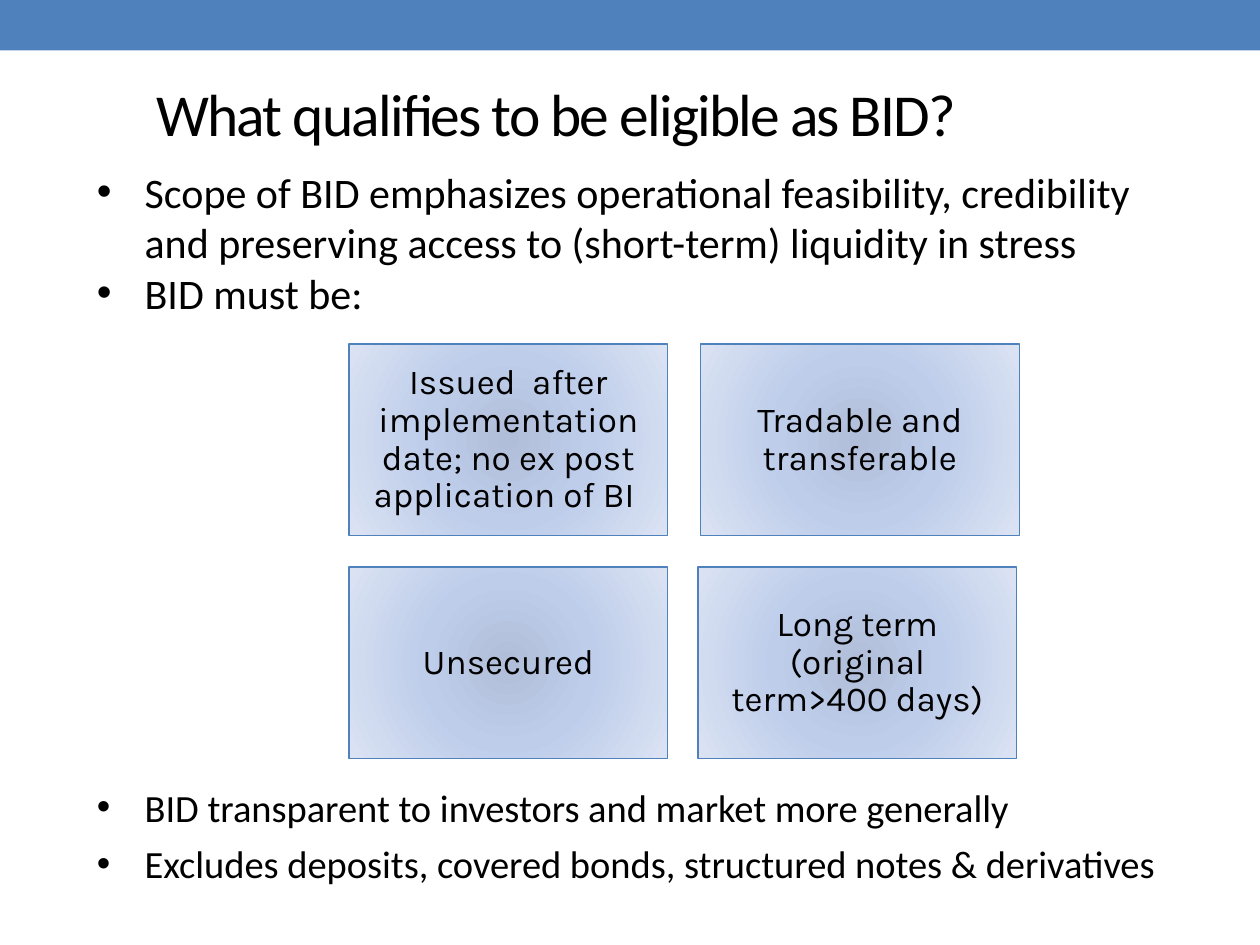
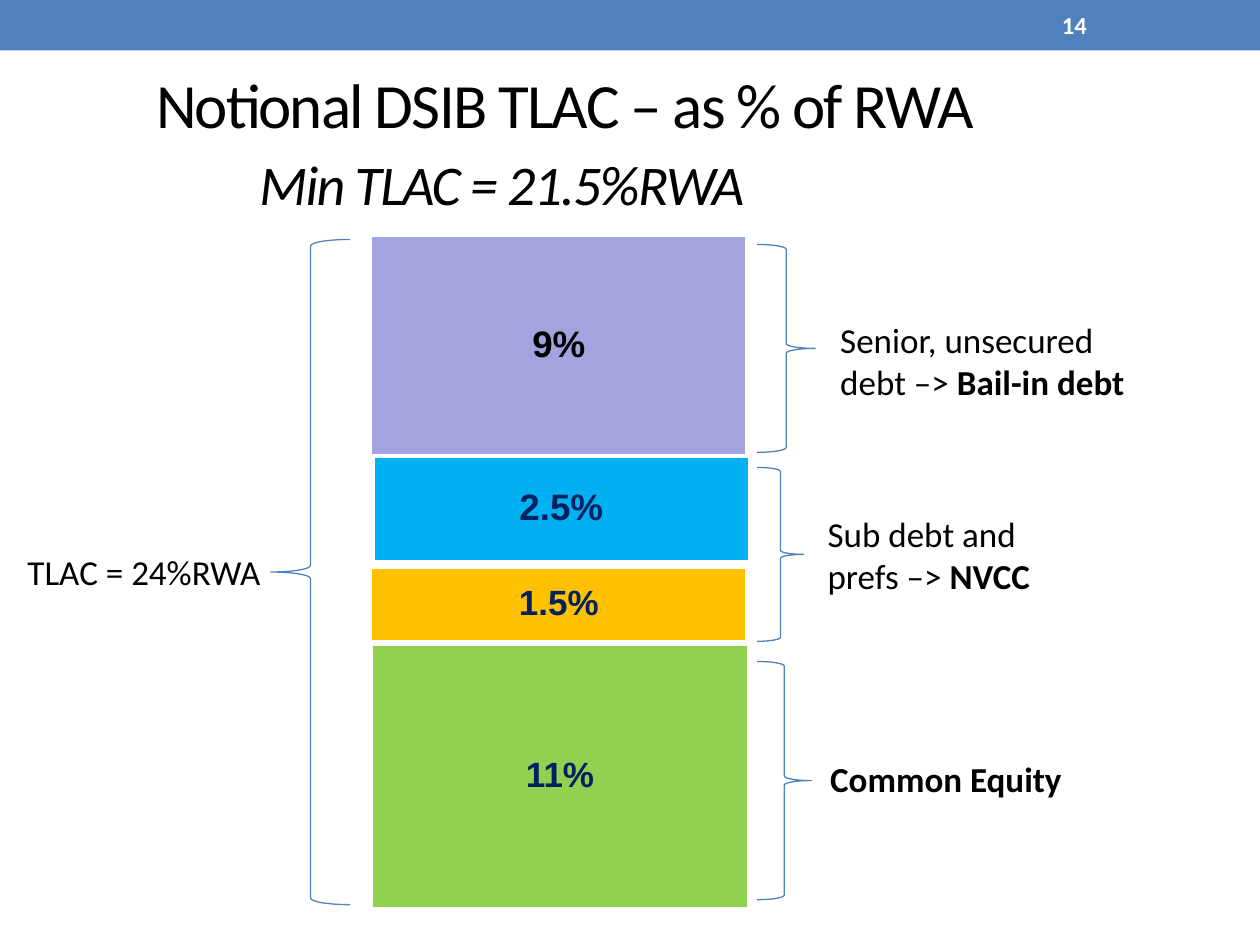
"""Builds two slides on bail-in debt: eligibility criteria and the TLAC stack."""
from lxml import etree
from pptx import Presentation
from pptx.dml.color import RGBColor
from pptx.enum.shapes import MSO_SHAPE
from pptx.enum.text import MSO_ANCHOR, PP_ALIGN
from pptx.oxml import parse_xml
from pptx.oxml.ns import nsdecls, qn
from pptx.util import Inches, Pt

BLUE, BLACK, WHITE, NAVY = "4F81BD", "000000", "FFFFFF", "002060"
CARD_STOPS = [(0, "B0BED9"), (45, "BECDEA"), (100, "DBE3F3")]
BODY_FONT, CARD_FONT, STACK_FONT = "Calibri", "Karla", "Arial"

ELIGIBILITY_TITLE = [("What qualifies to be eligible as BID?", 34, False, 0, 0)]
SCOPE_BULLETS = [
    "Scope of BID emphasizes operational feasibility, credibility and preserving "
    "access to (short-term) liquidity in stress",
    "BID must be:",
]
CLOSING_BULLETS = [
    "BID transparent to investors and market more generally",
    "Excludes deposits, covered bonds, structured notes & derivatives",
]
CARD_SIZE = (2.53, 1.52)
CARD_ROWS = [
    (2.73, [(2.77, "Issued  after implementation date; no ex post application of BI "),
            (5.56, "Tradable and transferable")]),
    (4.5, [(2.77, "Unsecured"),
           (5.54, "Long term (original term>400 days)")]),
]

STACK_TITLE = [
    ("Notional DSIB TLAC – as % of RWA", 36, False, 0, 0),
    ("Min TLAC = 21.5%RWA", 32, True, 0.82, 5),
]
PAGE_NUMBER = "14"
LAYER_WIDTH = 2.99
LAYERS = [
    ("9%", 2.94, 1.87, 1.75, "A3A3E0", BLACK, 21),
    ("2.5%", 2.96, 3.62, 0.84, "00B0F0", NAVY, 21),
    ("1.5%", 2.94, 4.5, 0.59, "FFC000", NAVY, 20),
    ("11%", 2.95, 5.11, 2.1, "92D050", NAVY, 20),
]
BRACES = [
    (MSO_SHAPE.LEFT_BRACE, (2.15, 1.9, 0.63, 5.28)),
    (MSO_SHAPE.RIGHT_BRACE, (6.01, 1.94, 0.46, 1.65)),
    (MSO_SHAPE.RIGHT_BRACE, (6.01, 3.71, 0.37, 1.38)),
    (MSO_SHAPE.RIGHT_BRACE, (6.01, 5.25, 0.43, 1.89)),
]
LABELS = [
    ((0.12, 4.32, 2.36, 0.44), "TLAC = 24%RWA", ""),
    ((6.57, 2.48, 2.61, 0.77), "Senior, unsecured debt –> ", "Bail-in debt"),
    ((6.47, 4.02, 1.97, 0.77), "Sub debt and prefs –> ", "NVCC"),
    ((6.49, 5.96, 2.52, 0.44), "", "Common Equity"),
]


def rgb(value):
    return RGBColor.from_string(value)


def style(paragraph, size, color=BLACK, face=BODY_FONT, bold=None, italic=None):
    font = paragraph.font
    font.name, font.size, font.bold, font.italic = face, Pt(size), bold, italic
    font.color.rgb = rgb(color)


def add_block(slide, preset, box, fill=None, line=None, weight=0.75):
    block = slide.shapes.add_shape(preset, *map(Inches, box))
    block.shadow.inherit = False
    if fill:
        block.fill.solid()
        block.fill.fore_color.rgb = rgb(fill)
    else:
        block.fill.background()
    if line:
        block.line.color.rgb = rgb(line)
        block.line.width = Pt(weight)
    else:
        block.line.fill.background()
    return block


def add_frame(slide, box, anchor=MSO_ANCHOR.TOP):
    frame = slide.shapes.add_textbox(*map(Inches, box)).text_frame
    frame.word_wrap = True
    frame.vertical_anchor = anchor
    return frame


def fill_paragraphs(frame, texts):
    frame.text = "\n".join(texts)
    return frame.paragraphs


def center_text(block, text, inset, size, color, face, bold=None):
    frame = block.text_frame
    frame.word_wrap = True
    frame.vertical_anchor = MSO_ANCHOR.MIDDLE
    frame.margin_left = frame.margin_right = Inches(inset)
    frame.margin_top = frame.margin_bottom = Inches(inset)
    paragraph = fill_paragraphs(frame, [text])[0]
    paragraph.alignment = PP_ALIGN.CENTER
    paragraph.line_spacing = 0.9
    style(paragraph, size, color, face, bold)


def add_radial_fill(block, stops):
    stop_xml = "".join(
        f'<a:gs pos="{position * 1000}"><a:srgbClr val="{color}"/></a:gs>'
        for position, color in stops)
    gradient = parse_xml(
        f'<a:gradFill {nsdecls("a")} rotWithShape="1"><a:gsLst>{stop_xml}</a:gsLst>'
        '<a:path path="circle"><a:fillToRect l="100000" t="100000" '
        'r="100000" b="100000"/></a:path></a:gradFill>')
    properties = block.element.spPr
    properties.replace(properties.find(qn("a:noFill")), gradient)


def add_bullets(slide, box, texts, size, gap=0):
    for index, paragraph in enumerate(fill_paragraphs(add_frame(slide, box), texts)):
        style(paragraph, size)
        paragraph.space_before = Pt(gap if index else 0)
        properties = paragraph._p.get_or_add_pPr()
        properties.set("marL", str(Inches(0.38)))
        properties.set("indent", str(-Inches(0.38)))
        bullet_font = etree.Element(qn("a:buFont"), typeface="Arial")
        bullet = etree.Element(qn("a:buChar"), char="•")
        position = list(properties).index(properties.find(qn("a:defRPr")))
        properties[position:position] = [bullet_font, bullet]


def start_slide(deck, title_lines, title_box):
    slide = deck.slides.add_slide(deck.slide_layouts[6])
    add_block(slide, MSO_SHAPE.RECTANGLE, (0, 0, 10, 0.4), BLUE)
    frame = add_frame(slide, title_box, MSO_ANCHOR.MIDDLE)
    paragraphs = fill_paragraphs(frame, [line[0] for line in title_lines])
    for paragraph, (_, size, italic, indent, gap) in zip(paragraphs, title_lines):
        style(paragraph, size, italic=italic)
        paragraph.space_before = Pt(gap)
        paragraph._p.get_or_add_pPr().set("marL", str(Inches(indent)))
        for run in paragraph.runs:
            run._r.get_or_add_rPr().set("spc", "-100")
    return slide


def build_eligibility(deck):
    slide = start_slide(deck, ELIGIBILITY_TITLE, (1.14, 0.56, 8.21, 0.67))
    add_bullets(slide, (0.67, 1.27, 8.74, 1.32), SCOPE_BULLETS, 24)
    for top, cards in CARD_ROWS:
        for left, text in cards:
            card = add_block(slide, MSO_SHAPE.RECTANGLE, (left, top, *CARD_SIZE), line=BLUE)
            add_radial_fill(card, CARD_STOPS)
            center_text(card, text, 0.08, 20, BLACK, CARD_FONT)
    add_bullets(slide, (0.67, 6.17, 8.74, 0.93), CLOSING_BULLETS, 22, 6)


def build_stack(deck):
    slide = start_slide(deck, STACK_TITLE, (1.14, 0.58, 8.36, 1.08))
    number_frame = add_frame(slide, (8.33, 0.02, 1.17, 0.36), MSO_ANCHOR.MIDDLE)
    style(fill_paragraphs(number_frame, [PAGE_NUMBER])[0], 14, WHITE, bold=True)
    for share, left, top, height, fill, color, size in LAYERS:
        layer = add_block(slide, MSO_SHAPE.RECTANGLE,
                          (left, top, LAYER_WIDTH, height), fill, WHITE, 2)
        center_text(layer, share, 0.06, size, color, STACK_FONT, True)
    for preset, box in BRACES:
        add_block(slide, preset, box, line=BLUE)
    for box, plain, strong in LABELS:
        paragraph = add_frame(slide, box).paragraphs[0]
        style(paragraph, 20)
        for text, bold in ((plain, False), (strong, True)):
            if text:
                run = paragraph.add_run()
                run.text, run.font.bold = text, bold


def main():
    deck = Presentation()
    deck.slide_width, deck.slide_height = Inches(10), Inches(7.5)
    build_eligibility(deck)
    build_stack(deck)
    deck.save("out.pptx")


if __name__ == "__main__":
    main()
